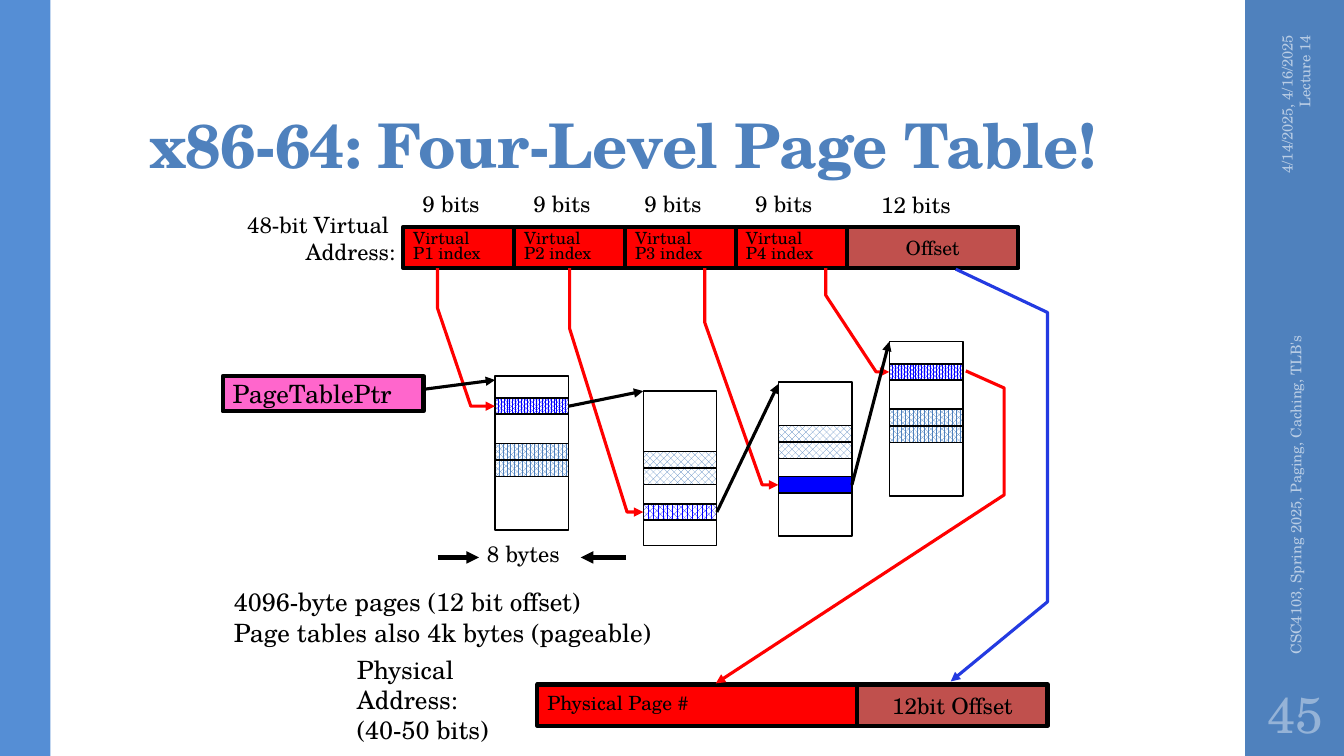
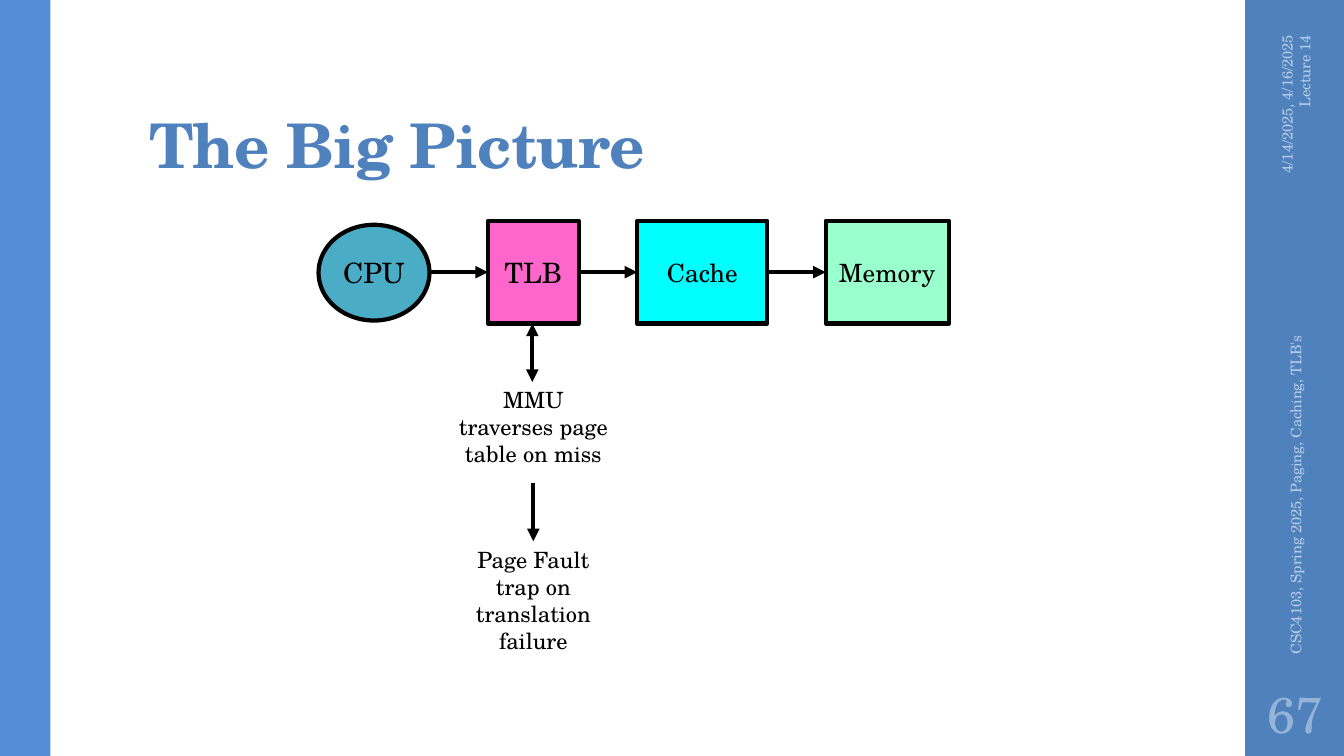
from itertools import pairwise

from lxml.etree import SubElement
from pptx import Presentation
from pptx.dml.color import RGBColor
from pptx.enum.dml import MSO_PATTERN as Pat
from pptx.enum.shapes import MSO_CONNECTOR as Conn, MSO_SHAPE as Geo
from pptx.enum.text import MSO_ANCHOR as Anchor, PP_ALIGN as Align
from pptx.oxml.ns import qn
from pptx.util import Inches, Pt


class Theme:
    font = "TeX Gyre Schola"
    blue, band, pale, dim = "4F81BD", "558ED5", "B9CDE5", "95B3D7"
    black, white, red, brick = "000000", "FFFFFF", "FF0000", "C0504D"
    pink, teal, cyan, mint = "FF66CC", "4BACC6", "00FFFF", "99FFCC"
    deep, royal = "0000FF", "233AE1"
    title, number, foot = 44, 36, 10.5
    big, text, label, small, tiny = 20, 18, 16, 14, 12
    thin, mid, thick = 1, 2.25, 3


def box(page, at, text="", size=Theme.label, geo=None, fill=None, edge=0,
        color=Theme.black, align=Align.LEFT, mid=False, wrap=False,
        space=None, pad=(0.1, 0.05), bold=False):
    """Add a preset shape, or a text box if geo is None; fill is a colour or (pattern, colour)."""
    place = [Inches(v) for v in at]
    if geo is None:
        shape = page.shapes.add_textbox(*place)
    else:
        shape = page.shapes.add_shape(geo, *place)
        shape.shadow.inherit = False
        if fill is None:
            shape.fill.background()
        elif isinstance(fill, tuple):
            shape.fill.patterned()
            shape.fill.pattern = fill[0]
            shape.fill.fore_color.rgb = RGBColor.from_string(fill[1])
            shape.fill.back_color.rgb = RGBColor.from_string(Theme.white)
        else:
            shape.fill.solid()
            shape.fill.fore_color.rgb = RGBColor.from_string(fill)
        if edge:
            shape.line.color.rgb = RGBColor.from_string(Theme.black)
            shape.line.width = Pt(edge)
        else:
            shape.line.fill.background()
    if text:
        frame = shape.text_frame
        frame.text = text
        frame.word_wrap = wrap
        frame.vertical_anchor = Anchor.MIDDLE if mid or geo else Anchor.TOP
        frame.margin_left = frame.margin_right = Inches(pad[0])
        frame.margin_top = frame.margin_bottom = Inches(pad[1])
        for par in frame.paragraphs:
            par.alignment = align
            if space:
                par.line_spacing = space
            for run in par.runs:
                run.font.name = Theme.font
                run.font.size = Pt(size)
                run.font.bold = bold
                run.font.color.rgb = RGBColor.from_string(color)
    return shape


def arrow(page, points, color=Theme.black, width=Theme.mid, both=False):
    """Add a connector for two points or an open outline for more."""
    spots = [(Inches(x), Inches(y)) for x, y in points]
    if len(spots) == 2:
        line = page.shapes.add_connector(Conn.STRAIGHT, *spots[0], *spots[1])
    else:
        pen = page.shapes.build_freeform(*spots[0])
        pen.add_line_segments(spots[1:], close=False)
        line = pen.convert_to_shape()
        line.fill.background()
    line.line.color.rgb = RGBColor.from_string(color)
    line.line.width = Pt(width)
    props = line.element.spPr
    for end in ("a:headEnd", "a:tailEnd") if both else ("a:tailEnd",):
        SubElement(props.find(qn("a:ln")), qn(end), type="triangle")
    SubElement(props, qn("a:effectLst"))


deck = Presentation()
deck.slide_width, deck.slide_height = Inches(13.33), Inches(7.5)

# Shared frame
pages = []
for title, number in (("x86-64: Four-Level Page Table!", "45"), ("The Big Picture", "67")):
    page = deck.slides.add_slide(deck.slide_layouts[6])
    pages.append(page)
    box(page, (12.35, 0, 0.98, 7.5), geo=Geo.RECTANGLE, fill=Theme.blue)
    box(page, (0, 0, 0.5, 7.5), geo=Geo.RECTANGLE, fill=Theme.band)
    head = box(page, (1.38, 0.32, 10.6, 1.53), title, Theme.title, color=Theme.blue,
               wrap=True, space=0.9, bold=True)
    head.text_frame.vertical_anchor = Anchor.BOTTOM
    head.text_frame.paragraphs[0].runs[0].font._element.set("spc", "-50")
    for at, text, align in (
        ((11.81, 1.09, 2.08, 0.4), "4/14/2025, 4/16/2025 Lecture 14", Align.RIGHT),
        ((10.89, 4.43, 3.92, 0.4), "CSC4103, Spring 2025, Paging, Caching, TLB's", Align.LEFT),
    ):
        foot = box(page, at, text, Theme.foot, color=Theme.pale, align=align, mid=True, wrap=True)
        foot.rotation = 270
    box(page, (12.35, 6.75, 1, 0.65), number, Theme.number, color=Theme.dim,
        align=Align.CENTER, mid=True, wrap=True, pad=(0.05, 0.05))
levels, chain = pages

# Virtual address
tight = {"space": 0.9, "pad": (0.07, 0.03)}
step, top, high = 1.1, 2.25, 0.41
box(levels, (2.35, 2.05, 1.67, 0.64), "48-bit Virtual \nAddress:", align=Align.RIGHT)
for i in range(4):
    left = 4 + i * step
    box(levels, (left + 0.12, 1.89, 0.71, 0.3), "9 bits", **tight)
    box(levels, (left, top, step, high), f"Virtual\nP{i + 1} index", Theme.tiny,
        Geo.RECTANGLE, Theme.red, Theme.thick, space=0.75)
box(levels, (8.67, 1.9, 0.84, 0.3), "12 bits", **tight)
box(levels, (8.4, top, 1.7, high), "Offset", Theme.small, Geo.RECTANGLE, Theme.brick,
    Theme.thick, align=Align.CENTER)

# Page tables: left, top, offset and fill of the entry in use, offset and pattern of the other two
wide, tall, row = 0.73, 1.53, 0.16
tables = (
    (4.91, 3.73, 0.22, (Pat.PERCENT_80, Theme.deep), 0.67, Pat.PERCENT_75),
    (6.38, 3.88, 1.12, (Pat.PERCENT_70, Theme.deep), 0.6, Pat.PERCENT_50),
    (7.72, 3.79, 0.94, Theme.deep, 0.43, Pat.PERCENT_50),
    (8.82, 3.39, 0.22, (Pat.PERCENT_80, Theme.deep), 0.67, Pat.PERCENT_75),
)
for left, top, used, fill, rest, pat in tables:
    box(levels, (left, top, wide, tall), geo=Geo.RECTANGLE, edge=Theme.thin)
    for gap, paint in ((used, fill), (rest, (pat, Theme.blue)), (rest + 0.17, (pat, Theme.blue))):
        box(levels, (left, top + gap, wide, row), geo=Geo.RECTANGLE, fill=paint, edge=Theme.thin)

# Each index leads to its entry: start, bend height, run before the entry
for (left, top, used, *_), (x, bend, run) in zip(
    tables, ((4.34, 3.06, 0.24), (5.65, 3.26, 0.16), (6.99, 3.2, 0.16), (8.19, 2.93, 0.13))
):
    y = top + used + row / 2
    arrow(levels, [(x, 2.66), (x, bend), (left - run, y), (left, y)], Theme.red)

# Each entry leads to the next table
for (left, top, used, *_), (goal, peak, *_), dip in zip(tables, tables[1:], (0, 0.02, 0)):
    arrow(levels, [(left + wide, top + used + row / 2), (goal, peak + dip)])

box(levels, (2.21, 3.73, 1.99, 0.35), "PageTablePtr", Theme.text, Geo.RECTANGLE,
    Theme.pink, Theme.thick)
arrow(levels, [(4.22, 3.86), (4.91, 3.77)])
box(levels, (4.76, 5.36, 0.88, 0.3), "8 bytes", **tight)
for start, end in ((4.34, 4.75), (6.21, 5.76)):
    arrow(levels, [(start, 5.53), (end, 5.53)], width=Theme.thick)

# Physical address
box(levels, (2.22, 5.77, 4.39, 0.71),
    "4096-byte pages (12 bit offset)\nPage tables also 4k bytes (pageable)", Theme.text)
box(levels, (3.44, 6.44, 1.52, 1.01), "Physical\nAddress:\n(40-50 bits)", Theme.text)
box(levels, (8.5, 6.79, 1.89, high), "12bit Offset", Theme.label, Geo.RECTANGLE,
    Theme.brick, Theme.thick, align=Align.CENTER)
box(levels, (5.33, 6.79, 3.17, high), "Physical Page #", Theme.small, Geo.RECTANGLE,
    Theme.red, Theme.thick, space=0.75)
arrow(levels, [(9.48, 2.67), (10.39, 3.1), (10.39, 5.97), (9.43, 6.76)], Theme.royal)
arrow(levels, [(9.58, 3.68), (9.96, 3.85), (9.96, 4.91), (7.1, 6.78)], Theme.red)

# Memory chain
left, gap, spans = 3.16, 0.58, []
for name, span, size, geo, fill, top, high in (
    ("CPU", 1.1, Theme.big, Geo.OVAL, Theme.teal, 2.23, 0.95),
    ("TLB", 0.9, Theme.big, Geo.RECTANGLE, Theme.pink, 2.19, 1.02),
    ("Cache", 1.29, Theme.text, Geo.RECTANGLE, Theme.cyan, 2.19, 1.02),
    ("Memory", 1.22, Theme.text, Geo.RECTANGLE, Theme.mint, 2.19, 1.02),
):
    box(chain, (left, top, span, high), name, size, geo, fill, Theme.thick, align=Align.CENTER)
    spans.append((left, left + span))
    left += span + gap
for (_, start), (end, _) in pairwise(spans):
    arrow(chain, [(start, 2.7), (end, 2.7)], width=Theme.thick)

# Steps on a miss
for x, y, both, top, high, text in (
    (5.28, 3.21, True, 3.78, 0.91, "MMU traverses page table on miss"),
    (5.29, 4.79, False, 5.37, 1.18, "Page Fault trap on translation failure"),
):
    arrow(chain, [(x, y), (x, y + gap)], width=Theme.thick, both=both)
    box(chain, (4.43, top, 1.72, high), text, align=Align.CENTER, wrap=True)

deck.save("out.pptx")
